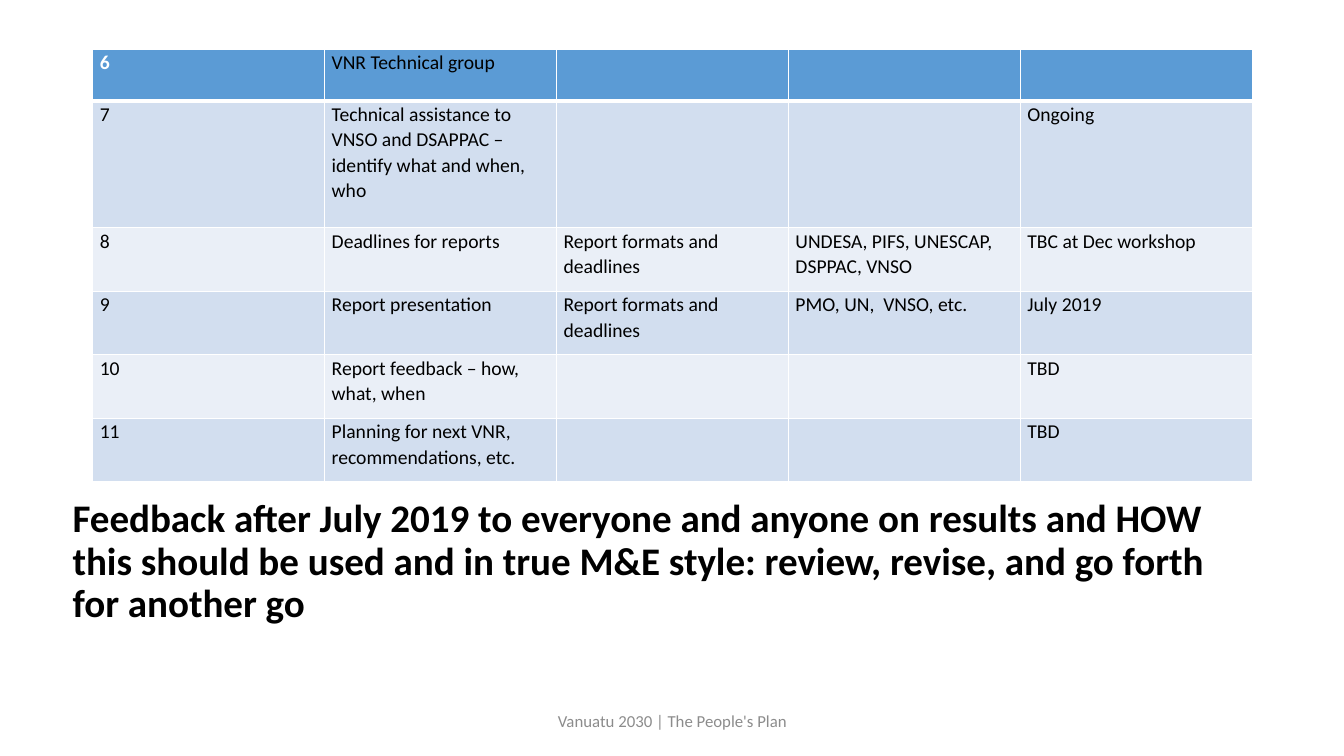
import pptx
import pptx.dml.color
import pptx.enum.text
import pptx.oxml
import pptx.oxml.ns
import pptx.util
from pptx.util import Inches

COLORS = {
    "black": "000000",
    "white": "FFFFFF",
    "header": "5B9BD5",
    "band_dark": "D2DEEF",
    "band_light": "EAEFF7",
    "footer": "8C8C8C",
}
FONT = "Calibri"
ROW_HEIGHTS = [0.51, 1.26, 0.63, 0.63, 0.63, 0.63]
COLUMN_WIDTH = 2.3
STEPS = [
    ["6", "VNR Technical group", "", "", ""],
    ["7", "Technical assistance to VNSO and DSAPPAC – identify what and when, who",
     "", "", "Ongoing"],
    ["8", "Deadlines for reports", "Report formats and deadlines",
     "UNDESA, PIFS, UNESCAP, DSPPAC, VNSO", "TBC at Dec workshop"],
    ["9", "Report presentation", "Report formats and deadlines",
     "PMO, UN,  VNSO, etc.", "July 2019"],
    ["10", "Report feedback – how, what, when", "", "", "TBD"],
    ["11", "Planning for next VNR, recommendations, etc.", "", "", "TBD"],
]
TITLE = ("Feedback after July 2019 to everyone and anyone on results and HOW "
         "this should be used and in true M&E style: review, revise, and go "
         "forth for another go")


def rgb(name):
    return pptx.dml.color.RGBColor.from_string(COLORS[name])


def write(frame, text, size, color, bold=False, align="LEFT", spacing=1.0):
    """Fill a text frame with one formatted paragraph."""
    frame.text = text
    para = frame.paragraphs[0]
    para.alignment = getattr(pptx.enum.text.PP_ALIGN, align)
    para.line_spacing = spacing
    for span in para.runs:
        span.font.name = FONT
        span.font.size = pptx.util.Pt(size)
        span.font.bold = bold
        span.font.color.rgb = rgb(color)


def add_borders(cell, widths):
    """Draw white cell edges; widths maps L, R, T and B to points."""
    properties = cell._tc.get_or_add_tcPr()
    for side, width in widths.items():
        properties.append(pptx.oxml.parse_xml(
            f'<a:ln{side} {pptx.oxml.ns.nsdecls("a")} w="{pptx.util.Pt(width)}">'
            f'<a:solidFill><a:srgbClr val="{COLORS["white"]}"/></a:solidFill>'
            f'</a:ln{side}>'))


def format_cell(cell, text, row, column):
    cell.margin_left = cell.margin_right = Inches(0.07)
    cell.margin_top = cell.margin_bottom = 0
    is_number = row == 0 and column == 0
    write(cell.text_frame, text, 14, "white" if is_number else "black",
          bold=is_number, spacing=1.07)
    add_borders(cell, {"L": 1, "R": 1, "T": 3 if row == 1 else 1,
                       "B": 3 if row == 0 else 1})
    band = "band_dark" if row % 2 else "band_light"
    cell.fill.solid()
    cell.fill.fore_color.rgb = rgb("header" if row == 0 else band)


def add_steps_table(page):
    columns = len(STEPS[0])
    table = page.shapes.add_table(
        len(STEPS), columns, Inches(0.92), Inches(0.49),
        Inches(COLUMN_WIDTH * columns), Inches(sum(ROW_HEIGHTS))).table
    for column in table.columns:
        column.width = Inches(COLUMN_WIDTH)
    for row, (height, texts) in enumerate(zip(ROW_HEIGHTS, STEPS)):
        table.rows[row].height = Inches(height)
        for column, text in enumerate(texts):
            format_cell(table.cell(row, column), text, row, column)


def place_title(page):
    title = page.shapes.title
    title.left, title.top = Inches(0.62), Inches(4.88)
    title.width, title.height = Inches(11.5), Inches(2.07)
    frame = title.text_frame
    frame.word_wrap = True
    frame.auto_size = pptx.enum.text.MSO_AUTO_SIZE.NONE
    frame.vertical_anchor = pptx.enum.text.MSO_ANCHOR.MIDDLE
    frame.margin_bottom = Inches(0.72)
    write(frame, TITLE, 27.9, "black", bold=True, spacing=0.9)


def add_footer(page):
    box = page.shapes.add_textbox(Inches(4.42), Inches(6.95), Inches(4.5), Inches(0.4))
    box.text_frame.word_wrap = True
    box.text_frame.vertical_anchor = pptx.enum.text.MSO_ANCHOR.MIDDLE
    write(box.text_frame, "Vanuatu 2030 | The People's Plan", 12, "footer",
          align="CENTER")


def main():
    deck = pptx.Presentation()
    deck.slide_width, deck.slide_height = Inches(13.33), Inches(7.5)
    page = deck.slides.add_slide(deck.slide_layouts[5])
    place_title(page)
    add_steps_table(page)
    add_footer(page)
    deck.save("out.pptx")


if __name__ == "__main__":
    main()
